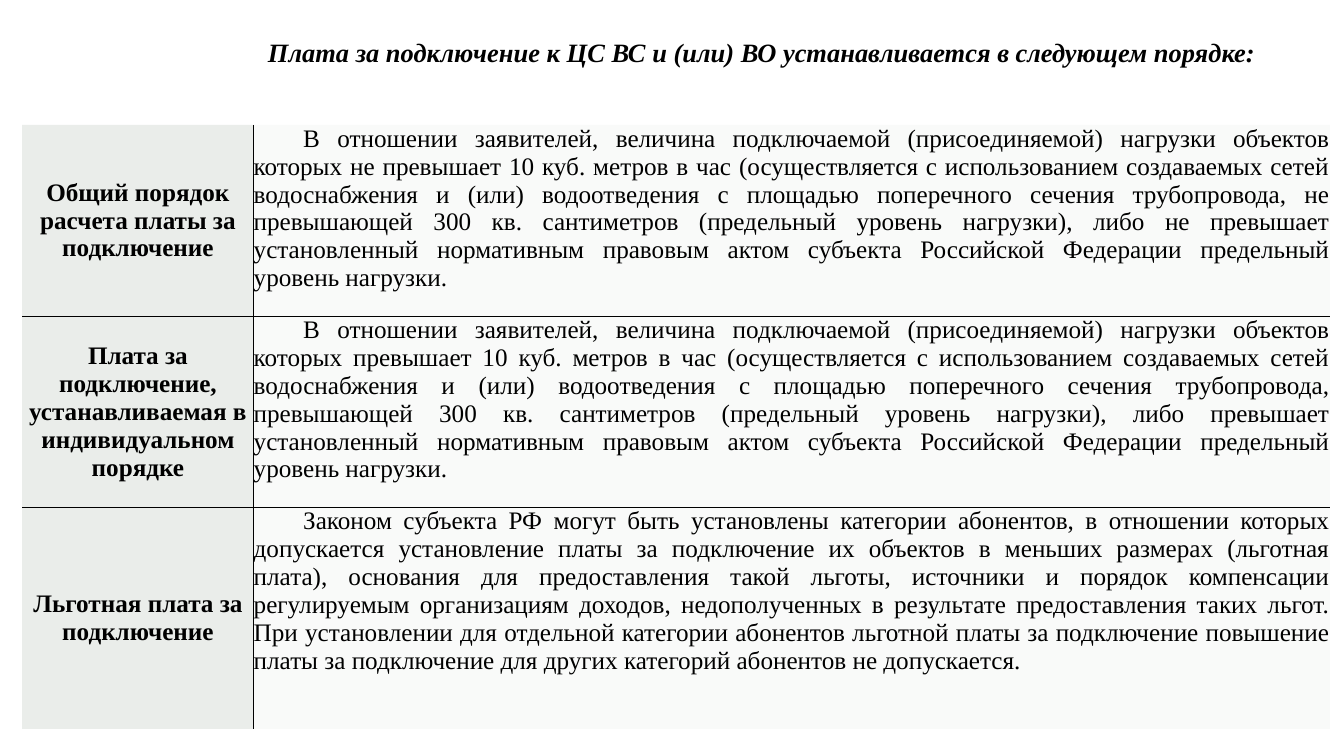
"""Build a slide on how the connection fee is set, with one table row per procedure."""
from dataclasses import dataclass

from lxml.etree import SubElement
from pptx import Presentation
from pptx.dml.color import RGBColor
from pptx.enum.text import MSO_ANCHOR, MSO_AUTO_SIZE, PP_ALIGN
from pptx.oxml.ns import qn
from pptx.slide import Slide
from pptx.table import _Cell
from pptx.text.text import TextFrame, _Paragraph
from pptx.util import Pt


@dataclass(frozen=True)
class Theme:
    font: str = "Times New Roman"
    title_size: float = 18.9
    body_size: float = 18
    text: RGBColor = RGBColor(0x00, 0x00, 0x00)
    background: RGBColor = RGBColor(0xFF, 0xFF, 0xFF)
    tint: RGBColor = RGBColor(0xCC, 0xD2, 0xCC)
    label_opacity: int = 40
    rule_opacity: int = 10
    border_width: float = 1


@dataclass(frozen=True)
class Procedure:
    label: str
    rule: str
    height: float


THEME = Theme()
TITLE = "Плата за подключение к ЦС ВС и (или) ВО устанавливается в следующем порядке:"
TABLE_LEFT, TABLE_TOP = 15.84, 89.28
COLUMN_WIDTHS = (165.6, 769.7)
RULE_INDENT = 35.4
PROCEDURES = (
    Procedure(
        "Общий порядок расчета платы за подключение",
        "В отношении заявителей, величина подключаемой (присоединяемой) нагрузки объектов "
        "которых не превышает 10 куб. метров в час (осуществляется с использованием создаваемых "
        "сетей водоснабжения и (или) водоотведения с площадью поперечного сечения трубопровода, "
        "не превышающей 300 кв. сантиметров (предельный уровень нагрузки), либо не превышает "
        "установленный нормативным правовым актом субъекта Российской Федерации предельный "
        "уровень нагрузки.",
        136.8,
    ),
    Procedure(
        "Плата за подключение, устанавливаемая в индивидуальном порядке",
        "В отношении заявителей, величина подключаемой (присоединяемой) нагрузки объектов "
        "которых превышает 10 куб. метров в час (осуществляется с использованием создаваемых "
        "сетей водоснабжения и (или) водоотведения с площадью поперечного сечения трубопровода, "
        "превышающей 300 кв. сантиметров (предельный уровень нагрузки), либо превышает "
        "установленный нормативным правовым актом субъекта Российской Федерации предельный "
        "уровень нагрузки.",
        136.8,
    ),
    Procedure(
        "Льготная плата за подключение",
        "Законом субъекта РФ могут быть установлены категории абонентов, в отношении которых "
        "допускается установление платы за подключение их объектов в меньших размерах (льготная "
        "плата), основания для предоставления такой льготы, источники и порядок компенсации "
        "регулируемым организациям доходов, недополученных в результате предоставления таких "
        "льгот. При установлении для отдельной категории абонентов льготной платы за подключение "
        "повышение платы за подключение для других категорий абонентов не допускается.",
        158.4,
    ),
)


def write_text(text_frame: TextFrame, text: str, size: float, alignment: PP_ALIGN,
               bold: bool = False, italic: bool = False) -> _Paragraph:
    """Write one formatted run into the first paragraph and return that paragraph."""
    paragraph = text_frame.paragraphs[0]
    paragraph.alignment = alignment
    run = paragraph.add_run()
    run.text = text
    run.font.name = THEME.font
    run.font.size = Pt(size)
    run.font.bold = bold
    run.font.italic = italic
    run.font.color.rgb = THEME.text
    return paragraph


def set_borders(cell: _Cell, visible: dict[str, bool]) -> None:
    """Draw the visible sides of a cell and clear the others."""
    properties = cell._tc.get_or_add_tcPr()
    for side in ("L", "R", "T", "B"):
        line = SubElement(properties, qn(f"a:ln{side}"), w=str(Pt(THEME.border_width)))
        if visible[side]:
            fill = SubElement(line, qn("a:solidFill"))
            SubElement(fill, qn("a:srgbClr"), val=str(THEME.text))
        else:
            SubElement(line, qn("a:noFill"))


def set_tint(cell: _Cell, opacity: int) -> None:
    """Fill a cell with the tint at the given opacity in percent."""
    cell.fill.solid()
    cell.fill.fore_color.rgb = THEME.tint
    color = cell._tc.tcPr.find(f"{qn('a:solidFill')}/{qn('a:srgbClr')}")
    SubElement(color, qn("a:alpha"), val=str(opacity * 1000))


def add_title(slide: Slide) -> None:
    """Place and format the slide title."""
    title = slide.shapes.title
    title.left, title.top, title.width, title.height = Pt(149.76), Pt(15.12), Pt(790.56), Pt(48.24)
    frame = title.text_frame
    frame.word_wrap = True
    frame.auto_size = MSO_AUTO_SIZE.NONE
    frame.vertical_anchor = MSO_ANCHOR.MIDDLE
    frame.margin_left = frame.margin_right = frame.margin_top = frame.margin_bottom = Pt(3.6)
    paragraph = write_text(frame, TITLE, THEME.title_size, PP_ALIGN.CENTER, bold=True, italic=True)
    paragraph.line_spacing = 0.85
    paragraph.space_before = Pt(0)


def add_procedure_table(slide: Slide) -> None:
    """Add the table of procedures with inner rules only."""
    frame = slide.shapes.add_table(
        len(PROCEDURES), len(COLUMN_WIDTHS), Pt(TABLE_LEFT), Pt(TABLE_TOP),
        Pt(sum(COLUMN_WIDTHS)), Pt(sum(procedure.height for procedure in PROCEDURES)))
    table = frame.table
    table.first_row = table.horz_banding = False
    for column, width in zip(table.columns, COLUMN_WIDTHS):
        column.width = Pt(width)
    last_row = len(PROCEDURES) - 1
    for row_index, procedure in enumerate(PROCEDURES):
        table.rows[row_index].height = Pt(procedure.height)
        label, rule = table.rows[row_index].cells
        for cell in (label, rule):
            cell.margin_left = cell.margin_right = cell.margin_top = cell.margin_bottom = Pt(0)
            set_borders(cell, {"L": cell is rule, "R": cell is label,
                               "T": row_index > 0, "B": row_index < last_row})
        set_tint(label, THEME.label_opacity)
        set_tint(rule, THEME.rule_opacity)
        label.vertical_anchor = MSO_ANCHOR.MIDDLE
        rule.vertical_anchor = MSO_ANCHOR.TOP
        write_text(label.text_frame, procedure.label, THEME.body_size, PP_ALIGN.CENTER, bold=True)
        paragraph = write_text(rule.text_frame, procedure.rule, THEME.body_size, PP_ALIGN.JUSTIFY)
        paragraph._p.get_or_add_pPr().set("indent", str(Pt(RULE_INDENT)))


def main() -> None:
    """Create and save the presentation."""
    presentation = Presentation()
    presentation.slide_width, presentation.slide_height = Pt(961.2), Pt(540)
    slide = presentation.slides.add_slide(presentation.slide_layouts.get_by_name("Title Only"))
    slide.background.fill.solid()
    slide.background.fill.fore_color.rgb = THEME.background
    add_title(slide)
    add_procedure_table(slide)
    presentation.save("out.pptx")


if __name__ == "__main__":
    main()
